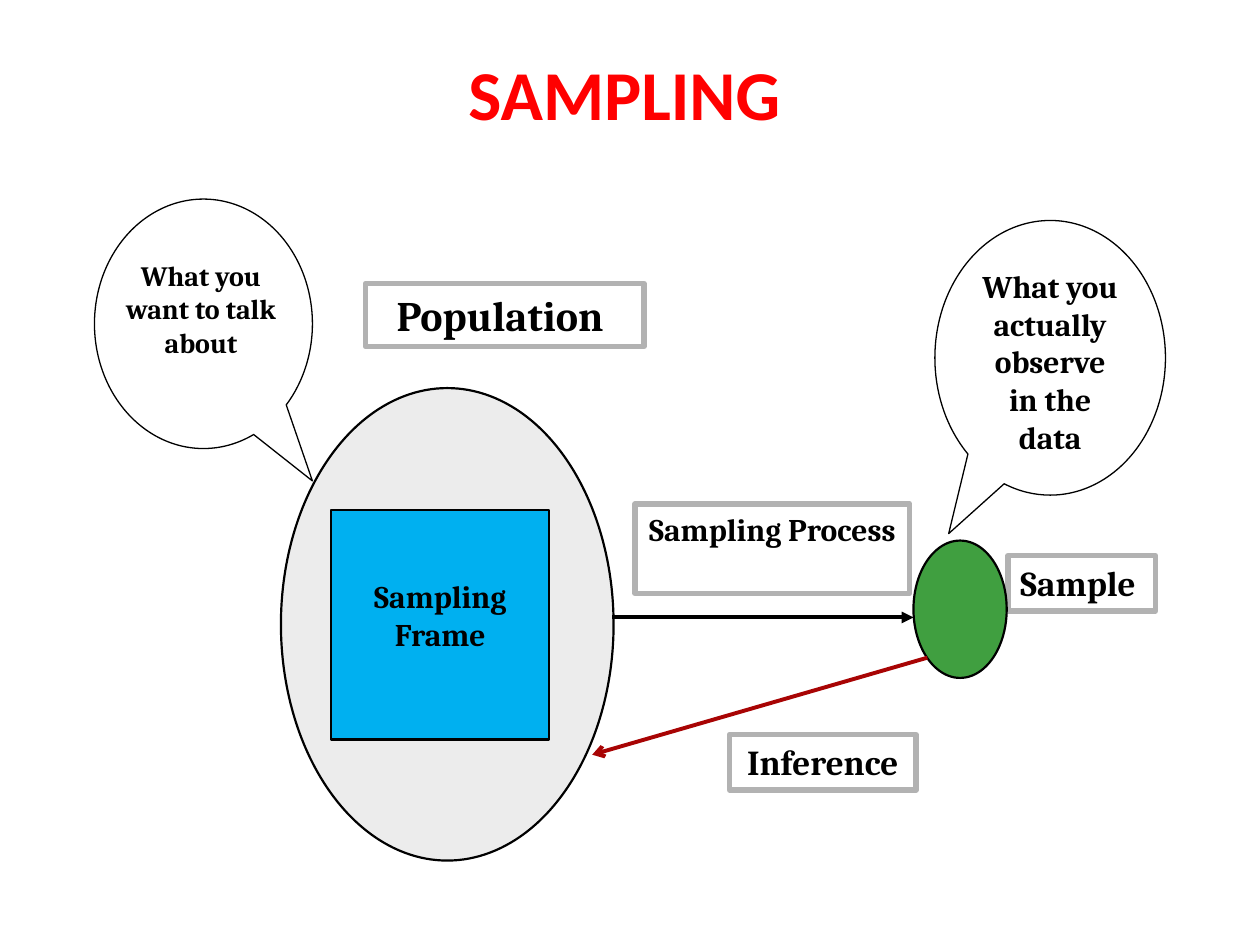
from lxml.etree import SubElement
from pptx import Presentation
from pptx.dml.color import RGBColor
from pptx.enum.shapes import MSO_CONNECTOR, MSO_SHAPE
from pptx.enum.text import MSO_ANCHOR, PP_ALIGN
from pptx.oxml.ns import qn
from pptx.util import Inches, Pt


def rgb(color):
    return RGBColor.from_string(color)


def write(sp, text, size, font="Cambria", color="000000", align=PP_ALIGN.CENTER, anchor=MSO_ANCHOR.TOP):
    tf = sp.text_frame
    tf.word_wrap = True
    tf.vertical_anchor = anchor
    p = tf.paragraphs[0]
    p.text = text
    p.alignment = align
    r = p.runs[0]
    r.font.name = font
    r.font.size = Pt(size)
    r.font.bold = True
    r.font.color.rgb = rgb(color)


prs = Presentation()
prs.slide_width = Inches(10)
prs.slide_height = Inches(7.5)
s = prs.slides.add_slide(prs.slide_layouts[6])

# Title
title = s.shapes.add_textbox(Inches(0.08), Inches(0.17), Inches(9.75), Inches(0.9))
title.text_frame.margin_top = title.text_frame.margin_bottom = 0
write(title, "SAMPLING", 40, "Calibri", "FF0000", anchor=MSO_ANCHOR.BOTTOM)

# Shapes from back to front: kind, box, fill, opacity %, line, line width
RECT, OVAL, CALLOUT = MSO_SHAPE.RECTANGLE, MSO_SHAPE.OVAL, MSO_SHAPE.OVAL_CALLOUT
LABEL = ("FFFFFF", 100, "B2B2B2", 3.15)
shapes = {
    "population label": (RECT, (2.9, 2.25, 2.21, 0.5), *LABEL),
    "sample label": (RECT, (8, 4.41, 1.17, 0.44), *LABEL),
    "population": (OVAL, (2.23, 3.08, 2.64, 3.75), "DDDDDD", 55, "000000", 1.25),
    "frame": (RECT, (2.63, 4.05, 1.73, 1.82), "00B0F0", 100, "000000", 1.25),
    "sample": (OVAL, (7.25, 4.29, 0.74, 1.09), "008000", 75, "000000", 1.25),
    "process label": (RECT, (5.04, 4, 2.18, 0.71), *LABEL),
    "population callout": (CALLOUT, (0.75, 1.58, 1.73, 1.98), None, 100, "000000", 0.75),
    "sample callout": (CALLOUT, (7.42, 1.75, 1.83, 2.18), None, 100, "000000", 0.75),
    "inference label": (RECT, (5.79, 5.83, 1.48, 0.44), *LABEL),
}
drawn = {}
for name, (kind, box, fill, opacity, line, width) in shapes.items():
    sp = s.shapes.add_shape(kind, *map(Inches, box))
    sp.shadow.inherit = False
    if fill:
        sp.fill.solid()
        sp.fill.fore_color.rgb = rgb(fill)
        if opacity < 100:
            clr = sp.fill._xPr.find(".//" + qn("a:srgbClr"))
            SubElement(clr, qn("a:alpha"), val=str(opacity * 1000))
    else:
        sp.fill.background()
    sp.line.color.rgb = rgb(line)
    sp.line.width = Pt(width)
    drawn[name] = sp

# Callout tips, as offsets from the centre in shares of the size
for name, tip in (("population callout", (0.5, 0.63)), ("sample callout", (-0.44, 0.64))):
    for i, offset in enumerate(tip):
        drawn[name].adjustments[i] = offset

# The process label is only just wide enough for its text
process = drawn["process label"].text_frame
process.margin_left = process.margin_right = Inches(0.08)

write(drawn["population label"], "Population ", 24)
write(drawn["sample label"], "Sample", 20, align=PP_ALIGN.LEFT)
write(drawn["process label"], "Sampling Process", 18)
write(drawn["sample callout"], "What you actually observe in the data", 18)
write(drawn["inference label"], "Inference", 20)

# Text laid over the frame and the population callout
for text, size, box in (
    ("Sampling Frame", 18, (2.78, 4.53, 1.43, 0.71)),
    ("What you want to talk about", 16, (0.9, 2, 1.39, 0.91)),
):
    write(s.shapes.add_textbox(*map(Inches, box)), text, size)

# Arrows between population and sample
for ends, color, head in (
    ((4.86, 4.9, 7.25, 4.9), "000000", "triangle"),
    ((7.36, 5.22, 4.7, 5.99), "A80404", "arrow"),
):
    arrow = s.shapes.add_connector(MSO_CONNECTOR.STRAIGHT, *map(Inches, ends))
    arrow.line.color.rgb = rgb(color)
    arrow.line.width = Pt(2.25)
    SubElement(arrow.line._get_or_add_ln(), qn("a:tailEnd"), type=head)
    SubElement(arrow._element.spPr, qn("a:effectLst"))

prs.save("out.pptx")
